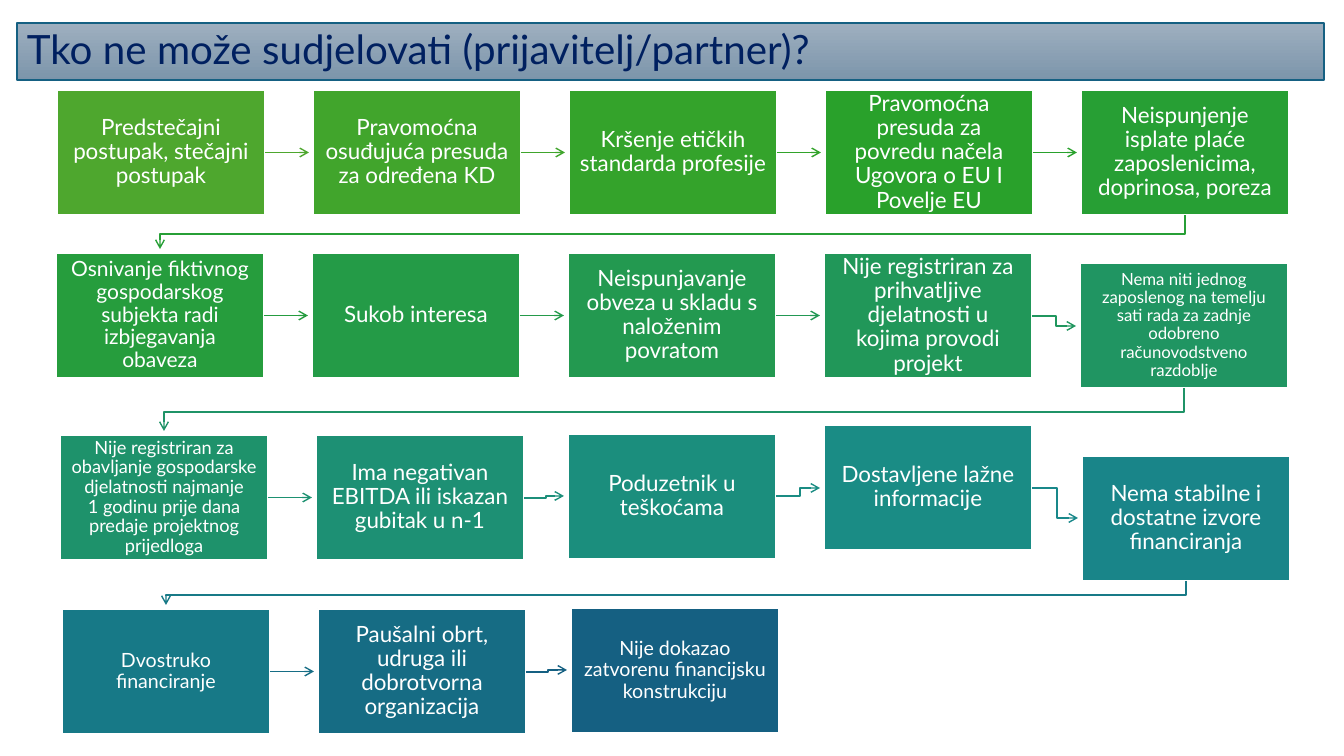
from itertools import pairwise

from lxml import etree
from pptx import Presentation
from pptx import util as u
from pptx.dml.color import RGBColor
from pptx.enum import shapes, text
from pptx.oxml import ns

TITLE = "Tko ne može sudjelovati (prijavitelj/partner)?"

# Each row: top, then boxes as (text, size, fill, outgoing arrow colour, x nudge, y nudge)
ROWS = [
    (90, [
        ("Predstečajni postupak, stečajni postupak", 16, "4EA72E", "4EA72E", 0, 0),
        ("Pravomoćna osuđujuća presuda za određena KD", 16, "41A52C", "40A52C", 0, 0),
        ("Kršenje etičkih standarda profesije", 16, "34A32B", "32A32A", 0, 0),
        ("Pravomoćna presuda za povredu načela Ugovora o EU I Povelje EU", 16, "29A12B", "29A12C", 0, 0),
        ("Neispunjenje isplate plaće zaposlenicima, doprinosa, poreza", 16, "279F34", "279F36", 0, 0),
    ]),
    (253, [
        ("Osnivanje fiktivnog gospodarskog subjekta radi izbjegavanja obaveza", 15, "269D3D", "259C40", -1, 0),
        ("Sukob interesa", 16, "249B47", "249A4A", -1, 0),
        ("Neispunjavanje obveza u skladu s naloženim povratom", 16, "239950", "229854", -1, 0),
        ("Nije registriran za prihvatljive djelatnosti u kojima provodi projekt", 16, "219759", "20965E", -1, 0),
        ("Nema niti jednog zaposlenog na temelju sati rada za zadnje odobreno računovodstveno razdoblje",
         12, "209562", "1F9367", -1, 10),
    ]),
    (435, [
        ("Nije registriran za obavljanje gospodarske djelatnosti najmanje\v1 godinu prije dana "
         "predaje projektnog prijedloga", 13, "1E926B", "1D9171", 3, 0),
        ("Ima negativan EBITDA ili iskazan gubitak u n-1", 16, "1D9074", "1C8F7A", 3, 0),
        ("Poduzetnik u teškoćama", 16, "1B8E7D", "1A8C83", -1, -1),
        ("Dostavljene lažne informacije", 16, "1A8C85", "19888A", -1, -10),
        ("Nema stabilne i dostatne izvore financiranja", 16, "198589", "187A87", 1, 21),
    ]),
    (609, [
        ("Dvostruko financiranje", 14, "177987", "166D85", 5, 0),
        ("Paušalni obrt, udruga ili dobrotvorna organizacija", 16, "166C84", "156082", 5, 0),
        ("Nije dokazao zatvorenu financijsku konstrukciju", 14, "156082", None, 2, -1),
    ]),
]

COLORS = {"title_top": "9EAFBF", "title_bottom": "7C95AB", "title_line": "156082",
          "title_text": "002060", "white": "FFFFFF"}
FONT = "Lato"
PX = 12192000 / 1344
LEFT, PITCH, WIDTH, HEIGHT = 57, 256, 208, 125
ARROW_GAP = 4


def px(length):
    return u.Emu(round(length * PX))


def rgb(color):
    return RGBColor.from_string(color)


def add_box(slide, left, top, width, height, words, size, color, align, line_color, line_width):
    shape = slide.shapes.add_shape(shapes.MSO_SHAPE.RECTANGLE, px(left), px(top), px(width), px(height))
    shape.shadow.inherit = False
    shape.line.color.rgb = rgb(line_color)
    shape.line.width = u.Pt(line_width)
    frame = shape.text_frame
    frame.word_wrap = True
    frame.vertical_anchor = text.MSO_ANCHOR.MIDDLE
    frame.margin_left = frame.margin_right = px(10)
    frame.margin_top = frame.margin_bottom = px(11)
    frame.text = words
    paragraph = frame.paragraphs[0]
    paragraph.alignment = align
    paragraph.line_spacing = 0.9
    paragraph.font.name = FONT
    paragraph.font.size = u.Pt(size)
    paragraph.font.color.rgb = rgb(color)
    return shape


def style_arrow(arrow, color):
    arrow.line.color.rgb = rgb(color)
    arrow.line.width = u.Pt(1)
    etree.SubElement(arrow.line._get_or_add_ln(), ns.qn("a:tailEnd"), type="arrow")


def add_arrow(slide, source, target, color):
    """Join two boxes: straight, stepped, or wrapping down to the next row."""
    shape, left, top = source
    _, next_left, next_top = target
    start_x, start_y = left + WIDTH, top + HEIGHT / 2
    end_x, end_y = next_left - ARROW_GAP, next_top + HEIGHT / 2
    if start_y == end_y:
        arrow = slide.shapes.add_connector(
            shapes.MSO_CONNECTOR.STRAIGHT, px(start_x), px(start_y), px(end_x), px(end_y))
        arrow.begin_connect(shape, 3)
        etree.SubElement(arrow._element.spPr, ns.qn("a:effectLst"))
        style_arrow(arrow, color)
        return
    if next_left > left:
        middle = (start_x + next_left) / 2
        bends = [(middle, start_y), (middle, end_y)]
    else:
        start_x, start_y = left + WIDTH / 2, top + HEIGHT
        end_x, end_y = next_left + WIDTH / 2, next_top - ARROW_GAP
        middle = (start_y + next_top) / 2
        bends = [(start_x, middle), (end_x, middle)]
    builder = slide.shapes.build_freeform(start_x, start_y, scale=PX)
    builder.add_line_segments(bends + [(end_x, end_y)], close=False)
    arrow = builder.convert_to_shape()
    arrow.fill.background()
    arrow.shadow.inherit = False
    style_arrow(arrow, color)


def main():
    presentation = Presentation()
    presentation.slide_width, presentation.slide_height = px(1344), px(756)
    slide = presentation.slides.add_slide(presentation.slide_layouts[6])

    title = add_box(slide, 17, 23, 1307, 57, TITLE, 28.8, COLORS["title_text"],
                    text.PP_ALIGN.LEFT, COLORS["title_line"], 1)
    title.text_frame.margin_top = title.text_frame.margin_bottom = px(5)
    title.fill.gradient()
    title.fill.gradient_angle = 270
    for stop, name in zip(title.fill.gradient_stops, ("title_top", "title_bottom")):
        stop.color.rgb = rgb(COLORS[name])

    boxes, arrow_colors = [], []
    for row_top, row in ROWS:
        for column, (words, size, fill, arrow_color, nudge_x, nudge_y) in enumerate(row):
            left, top = LEFT + column * PITCH + nudge_x, row_top + nudge_y
            shape = add_box(slide, left, top, WIDTH, HEIGHT, words, size, COLORS["white"],
                            text.PP_ALIGN.CENTER, COLORS["white"], 1.5)
            shape.fill.solid()
            shape.fill.fore_color.rgb = rgb(fill)
            boxes.append((shape, left, top))
            arrow_colors.append(arrow_color)

    for (source, target), color in zip(pairwise(boxes), arrow_colors):
        add_arrow(slide, source, target, color)

    presentation.save("out.pptx")


if __name__ == "__main__":
    main()
